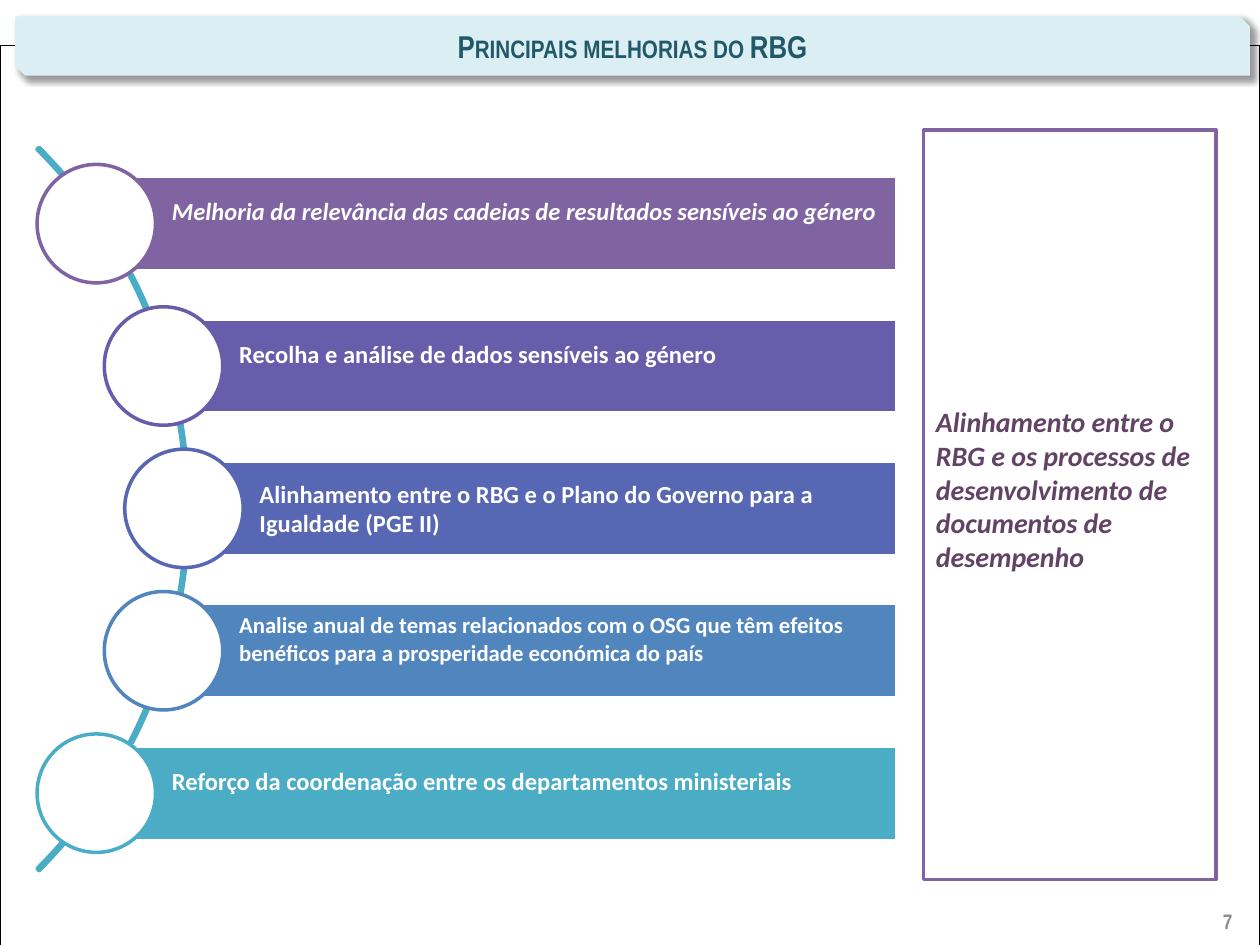
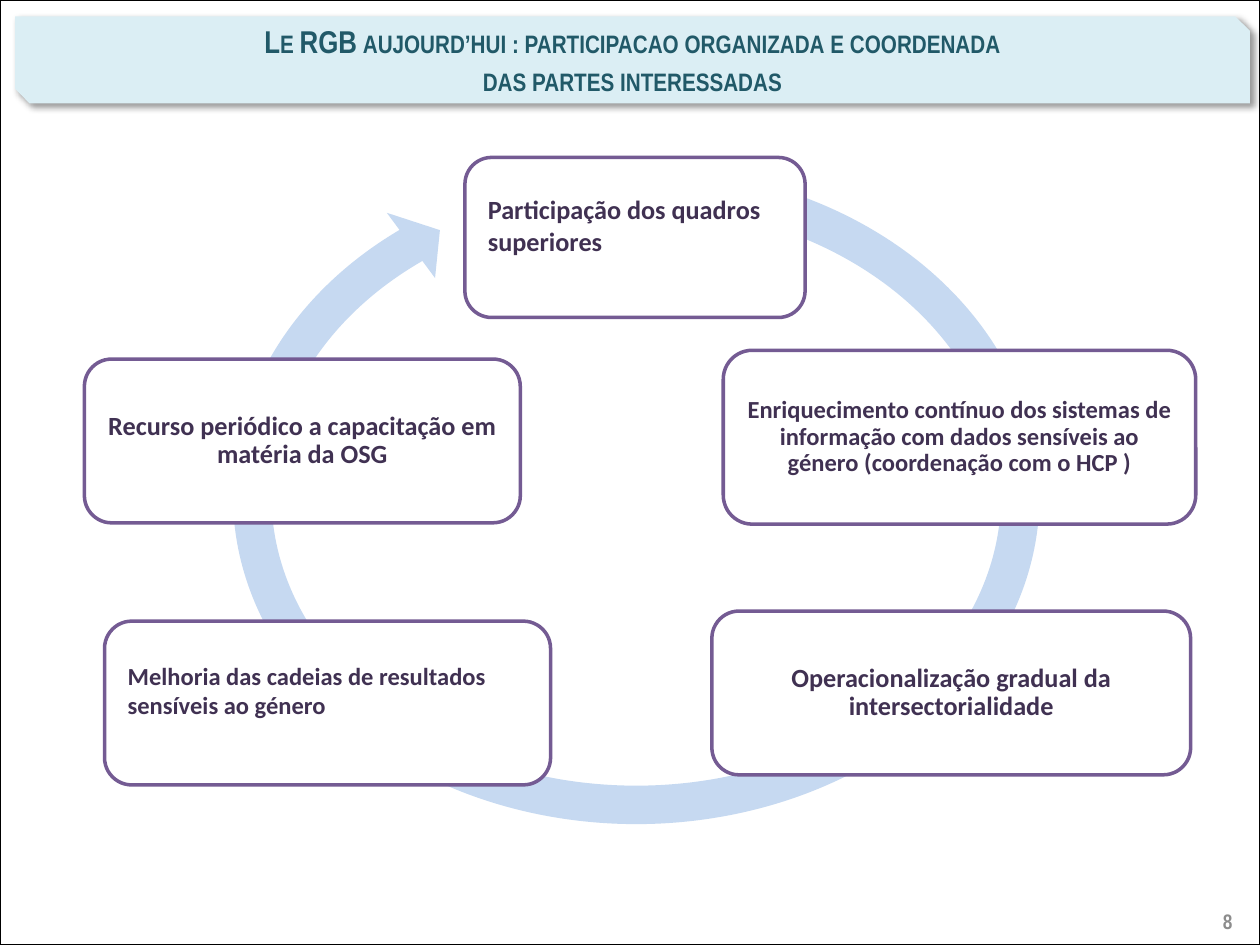
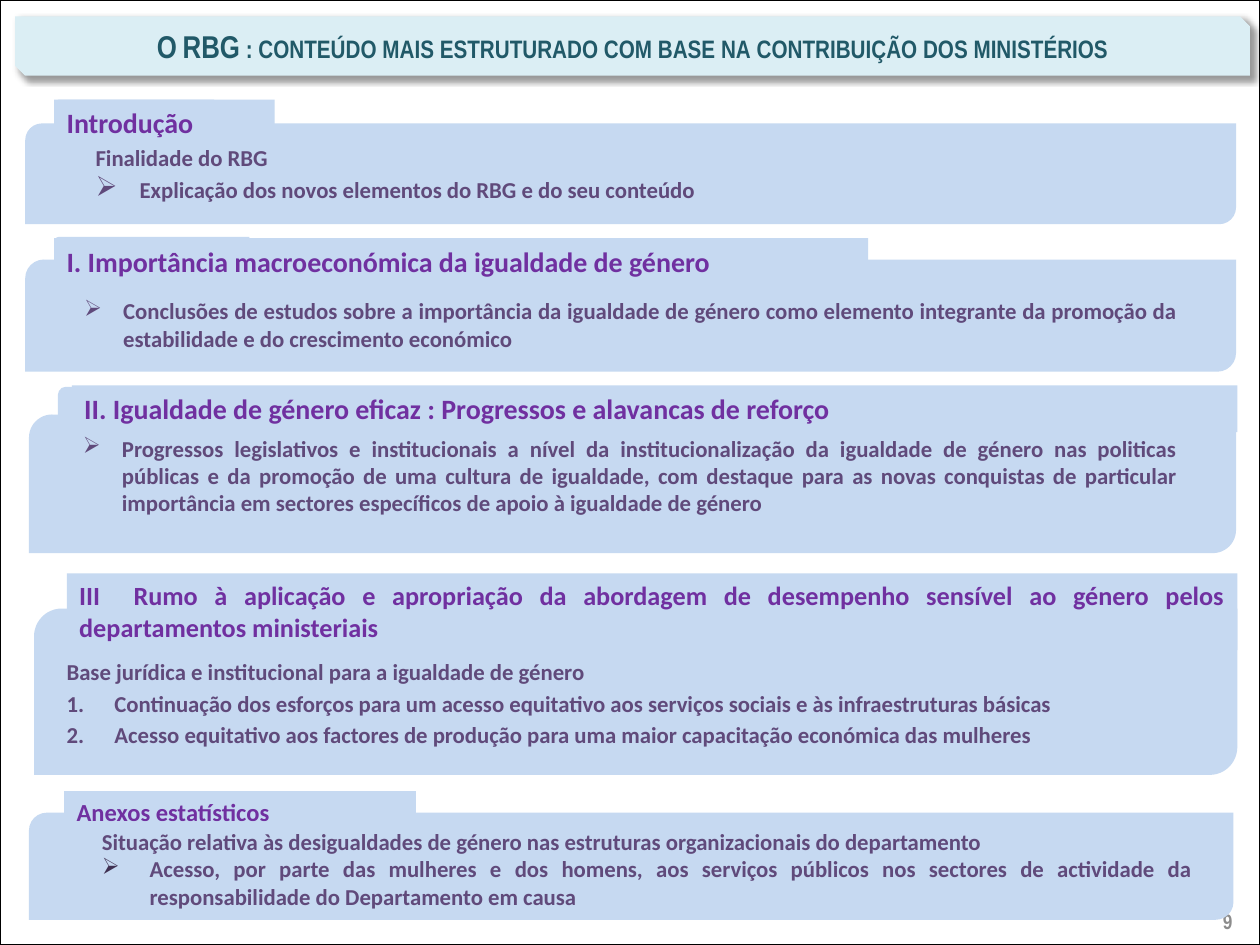
from dataclasses import dataclass, replace
from math import sqrt
from typing import NamedTuple, Optional, Sequence

from lxml.etree import SubElement
from pptx import Presentation
from pptx.dml.color import RGBColor
from pptx.enum.shapes import MSO_SHAPE as Preset
from pptx.enum.text import MSO_ANCHOR as Anchor, PP_ALIGN as Align
from pptx.oxml.ns import qn
from pptx.util import Emu, Inches, Pt

# The slide is a grid of 100 columns by 75 rows; all lengths below count its cells.
SLIDE_WIDTH, SLIDE_HEIGHT = Inches(10), Inches(7.5)
COLUMNS, ROWS = 100, 75
COLUMN, ROW = SLIDE_WIDTH / COLUMNS, SLIDE_HEIGHT / ROWS

COLORS = {
    "black": "000000", "white": "FFFFFF", "band": "DBEEF4", "title": "215968",
    "number": "8C8C8C", "arc": "4BACC6", "purple": "8064A2", "violet": "685DAB",
    "indigo": "5767B4", "blue": "5185BD", "teal": "4BACC6", "plum": "634365",
    "outline": "745B93", "dark": "403152", "panel": "C6D9F1",
    "heading": "7030A0", "body": "604A7B",
}


class Box(NamedTuple):
    left: float
    top: float
    width: float
    height: float

    def lengths(self) -> list[Emu]:
        return [Emu(round(cells * unit)) for cells, unit in zip(self, (COLUMN, ROW) * 2)]


class Insets(NamedTuple):
    left: float = 1
    top: float = 0.5
    right: float = 1
    bottom: float = 0.5


@dataclass(frozen=True)
class TextStyle:
    size: float
    color: str
    font: str = "Calibri"
    italic: bool = False
    small_caps: bool = False
    align: Align = Align.LEFT
    spacing: float = 1.0
    anchor: Anchor = Anchor.MIDDLE


@dataclass(frozen=True)
class Improvement:
    text: str
    color: str
    lift: float = 2
    size: float = 14
    italic: bool = False


@dataclass(frozen=True)
class Stage:
    box: Box
    text: str
    size: float = 15
    centered: bool = True


@dataclass(frozen=True)
class Section:
    """A panel with a heading; the lines from first_item on carry a marker."""
    panel: Box
    heading_box: Box
    heading: str
    text_box: Box
    lines: Sequence[str]
    tab: Optional[Box] = None
    heading_size: float = 16
    heading_align: Align = Align.LEFT
    first_item: int = 0
    indent: float = 3.1
    spacing: float = 1.0
    item_gap: float = 0
    numbered: bool = False
    marker_size: int = 100
    marker_color: str = "body"


TITLE = TextStyle(18, "title", "Arial Narrow", small_caps=True, align=Align.CENTER)
NUMBER = TextStyle(12, "number", "Arial Narrow", align=Align.RIGHT)
NUMBER_BOX = Box(75.5, 71.1, 23.3, 4)

BAR_TOP, BAR_PITCH, BAR_HEIGHT, BAR_RIGHT = 14, 11.3, 7.5, 71.2
CIRCLE = 9.4
ARC_CENTER, ARC_MIDDLE, ARC_RADIUS = -25.6, 40.4, 40.6
CIRCLE_TRACK = 40.2  # radius on which the circle centres lie
IMPROVEMENTS = [
    Improvement("Melhoria da relevância das cadeias de resultados sensíveis ao género",
                "purple", italic=True),
    Improvement("Recolha e análise de dados sensíveis ao género", "violet"),
    Improvement("Alinhamento entre o RBG e o Plano do Governo para a Igualdade (PGE II)",
                "indigo", lift=0),
    Improvement("Analise anual de temas relacionados com o OSG que têm efeitos benéficos "
                "para a prosperidade económica do país", "blue", size=13),
    Improvement("Reforço da coordenação entre os departamentos ministeriais", "teal"),
]
ALIGNMENT_BOX = Box(73.3, 10.3, 23.2, 59.5)
ALIGNMENT = ("Alinhamento entre o RBG e os processos de desenvolvimento de "
             "documentos de desempenho")

CYCLE_BOX = Box(16.8, 11.6, 67.4, 55.5)
STAGES = [
    Stage(Box(36.9, 12.5, 27, 12.7), "Participação dos quadros superiores", centered=False),
    Stage(Box(8.3, 49.3, 35.4, 13),
          "Melhoria das cadeias de resultados sensíveis ao género", 14, centered=False),
    Stage(Box(56.5, 48.5, 38, 13), "Operacionalização gradual da intersectorialidade"),
    Stage(Box(57.4, 27.8, 37.5, 13.8),
          "Enriquecimento contínuo dos sistemas de informação com dados sensíveis ao "
          "género (coordenação com o HCP )", 14),
    Stage(Box(6.7, 28.5, 34.6, 13), "Recurso periódico a capacitação em matéria da OSG"),
]

SECTIONS = [
    Section(Box(2, 9.8, 96.1, 8), Box(4.3, 7.9, 17.5, 3.7), "Introdução",
            Box(6.6, 10.9, 87.9, 5.9),
            ["Finalidade do RBG", "Explicação dos novos elementos do RBG e do seu conteúdo"],
            tab=Box(4.3, 7.9, 12.7, 2.5), first_item=1, indent=3.5, item_gap=3,
            marker_size=123),
    Section(Box(2, 20.6, 96.1, 8.9), Box(4.3, 18.9, 64.6, 3.7),
            "I. Importância macroeconómica da igualdade de género",
            Box(5.7, 23.1, 88.6, 5.4),
            ["Conclusões de estudos sobre a importância da igualdade de género como elemento "
             "integrante da promoção da estabilidade e do crescimento económico"],
            tab=Box(4.3, 18.8, 15.5, 2.4)),
    Section(Box(2.3, 32.9, 95.8, 11), Box(5.7, 30.6, 92.5, 3.7),
            "II. Igualdade de género eficaz : Progressos e alavancas de reforço",
            Box(5.6, 34, 88.7, 7.6),
            ["Progressos legislativos e institucionais a nível da institucionalização da "
             "igualdade de género nas politicas públicas e da promoção de uma cultura de "
             "igualdade, com destaque para as novas conquistas de particular importância em "
             "sectores específicos de apoio à igualdade de género"],
            tab=Box(4.6, 30.7, 15.3, 3.8)),
    Section(Box(2.7, 48.3, 95.5, 13.2), Box(5.3, 45.5, 92.9, 6.1),
            "III  Rumo à aplicação e apropriação da abordagem de desempenho sensível ao "
            "género pelos departamentos ministeriais",
            Box(4.3, 51.4, 91.2, 8.4),
            ["Base jurídica e institucional para a igualdade de género",
             "Continuação dos esforços para um acesso equitativo aos serviços sociais e às "
             "infraestruturas básicas",
             "Acesso equitativo aos factores de produção para uma maior capacitação económica "
             "das mulheres"],
            tab=Box(5, 50.2, 15.4, 3.6), heading_size=15, heading_align=Align.JUSTIFY,
            first_item=1, indent=3.8, spacing=1.15, numbered=True),
    Section(Box(2.3, 64.5, 95.6, 8.5), Box(5.1, 62.8, 27.9, 5.7), "Anexos estatísticos",
            Box(7.1, 65.2, 88.4, 7.6),
            ["Situação relativa às desigualdades de género nas estruturas organizacionais do "
             "departamento",
             "Acesso, por parte das mulheres e dos homens, aos serviços públicos nos sectores "
             "de actividade da responsabilidade do Departamento em causa"],
            heading_size=14, first_item=1, indent=3.8, marker_color="dark"),
]


def rgb(name: str) -> RGBColor:
    return RGBColor.from_string(COLORS[name])


def draw_shape(slide, preset: Preset, box: Box, fill: Optional[str] = None,
               line: Optional[str] = None, line_width: float = 2):
    shape = slide.shapes.add_shape(preset, *box.lengths())
    shape.shadow.inherit = False
    if fill:
        shape.fill.solid()
        shape.fill.fore_color.rgb = rgb(fill)
    else:
        shape.fill.background()
    if line:
        shape.line.color.rgb = rgb(line)
        shape.line.width = Pt(line_width)
    else:
        shape.line.fill.background()
    return shape


def write(shape, lines: Sequence[str], style: TextStyle, insets: Insets = Insets()) -> None:
    frame = shape.text_frame
    frame.text = "\n".join(lines)
    frame.word_wrap = True
    frame.vertical_anchor = style.anchor
    frame.margin_left, frame.margin_right = (
        Emu(round(inset * COLUMN)) for inset in (insets.left, insets.right))
    frame.margin_top, frame.margin_bottom = (
        Emu(round(inset * ROW)) for inset in (insets.top, insets.bottom))
    for paragraph in frame.paragraphs:
        paragraph.alignment = style.align
        paragraph.line_spacing = style.spacing
        for run in paragraph.runs:
            run.font.name = style.font
            run.font.size = Pt(style.size)
            run.font.bold = True
            run.font.italic = style.italic
            run.font.color.rgb = rgb(style.color)
            if style.small_caps:
                run._r.get_or_add_rPr().set("cap", "small")


def add_shadow(shape) -> None:
    effects = shape._element.spPr.find(qn("a:effectLst"))
    shadow = SubElement(effects, qn("a:outerShdw"), blurRad=str(Pt(4)), dist=str(Pt(3)),
                        dir=str(45 * 60000), algn="tl", rotWithShape="0")
    color = SubElement(shadow, qn("a:srgbClr"), val=COLORS["black"])
    SubElement(color, qn("a:alpha"), val="40000")


def add_marker(paragraph, section: Section) -> None:
    """Give the paragraph a hanging indent with an arrow bullet or a number."""
    indent = round(section.indent * COLUMN)
    properties = paragraph._p.get_or_add_pPr()
    properties.set("marL", str(indent))
    properties.set("indent", str(-indent))
    color = SubElement(properties, qn("a:buClr"))
    SubElement(color, qn("a:srgbClr"), val=COLORS[section.marker_color])
    SubElement(properties, qn("a:buSzPct"), val=str(section.marker_size * 1000))
    if section.numbered:
        SubElement(properties, qn("a:buAutoNum"), type="arabicPeriod")
    else:
        SubElement(properties, qn("a:buChar"), char="➢")


def start_slide(presentation, number: int, title: Sequence[str],
                band_height: float = 4.7, frame_top: float = 0):
    """Add a blank slide with its frame, title band and page number."""
    slide = presentation.slides.add_slide(presentation.slide_layouts[6])
    draw_shape(slide, Preset.RECTANGLE, Box(0, frame_top, COLUMNS, ROWS),
               line="black", line_width=0.75)
    band = draw_shape(slide, Preset.SNIP_2_DIAG_RECTANGLE, Box(1.2, 1.3, 98, band_height), "band")
    add_shadow(band)
    write(band, title, TITLE)
    write(slide.shapes.add_textbox(*NUMBER_BOX.lengths()), [str(number)], NUMBER)
    return slide


def draw_improvement(slide, position: int, item: Improvement) -> None:
    top = BAR_TOP + position * BAR_PITCH
    middle = top + BAR_HEIGHT / 2
    rise = (position - (len(IMPROVEMENTS) - 1) / 2) * BAR_PITCH
    left = ARC_CENTER + sqrt(CIRCLE_TRACK ** 2 - rise ** 2)
    bar = draw_shape(slide, Preset.RECTANGLE, Box(left, top, BAR_RIGHT - left, BAR_HEIGHT),
                     item.color, "white")
    write(bar, [item.text], TextStyle(item.size, "white", italic=item.italic),
          Insets(6, 0.4, 0.4, 0.4 + item.lift))
    draw_shape(slide, Preset.OVAL, Box(left - CIRCLE / 2, middle - CIRCLE / 2, CIRCLE, CIRCLE),
               "white", item.color)


def build_improvements(presentation) -> None:
    slide = start_slide(presentation, 7, ["Principais melhorias do RBG"], frame_top=3.6)
    arc = draw_shape(slide, Preset.BLOCK_ARC,
                     Box(ARC_CENTER - ARC_RADIUS, ARC_MIDDLE - ARC_RADIUS,
                         2 * ARC_RADIUS, 2 * ARC_RADIUS), line="arc")
    for index, value in enumerate((189, 27, 0.3 / 100)):
        arc.adjustments[index] = value
    for position, item in enumerate(IMPROVEMENTS):
        draw_improvement(slide, position, item)
    panel = draw_shape(slide, Preset.RECTANGLE, ALIGNMENT_BOX, "white", "purple")
    write(panel, [ALIGNMENT], TextStyle(16, "plum", italic=True), Insets(bottom=3))


def draw_stage(slide, stage: Stage) -> None:
    shape = draw_shape(slide, Preset.ROUNDED_RECTANGLE, stage.box, "white", "outline")
    style = TextStyle(stage.size, "dark")
    insets = Insets(1.2, 1.2, 1.2, 3.2)
    if stage.centered:
        style = replace(style, align=Align.CENTER, spacing=0.9)
        insets = Insets(1.2, 1.2, 1.2, 1.2)
    write(shape, [stage.text], style, insets)


def build_cycle(presentation) -> None:
    slide = start_slide(presentation, 8,
                        ["Le RGB aujourd’hui : participacao organizada e coordenada",
                         "das partes interessadas"], band_height=6.9)
    arrow = draw_shape(slide, Preset.CIRCULAR_ARROW, CYCLE_BOX, "panel")
    for index, value in enumerate((5.5 / 100, 3.31, 136.81, 174.44, 5.8 / 100)):
        arrow.adjustments[index] = value
    for stage in STAGES:
        draw_stage(slide, stage)


def draw_section(slide, section: Section) -> None:
    for box in filter(None, (section.tab, section.panel)):
        draw_shape(slide, Preset.ROUND_2_DIAG_RECTANGLE, box, "panel")
    heading = draw_shape(slide, Preset.RECTANGLE, section.heading_box, "panel")
    write(heading, [section.heading],
          TextStyle(section.heading_size, "heading", align=section.heading_align,
                    anchor=Anchor.TOP))
    body = draw_shape(slide, Preset.RECTANGLE, section.text_box, "panel")
    write(body, section.lines,
          TextStyle(13, "body", align=Align.JUSTIFY, spacing=section.spacing,
                    anchor=Anchor.TOP))
    for paragraph in body.text_frame.paragraphs[section.first_item:]:
        paragraph.space_before = Pt(section.item_gap)
        add_marker(paragraph, section)


def build_contents(presentation) -> None:
    slide = start_slide(presentation, 9, ["O RBG : conteúdo mais estruturado com base na "
                                          "contribuição dos ministérios"])
    for section in SECTIONS:
        draw_section(slide, section)


def main() -> None:
    presentation = Presentation()
    presentation.slide_width, presentation.slide_height = SLIDE_WIDTH, SLIDE_HEIGHT
    build_improvements(presentation)
    build_cycle(presentation)
    build_contents(presentation)
    presentation.save("out.pptx")


if __name__ == "__main__":
    main()
